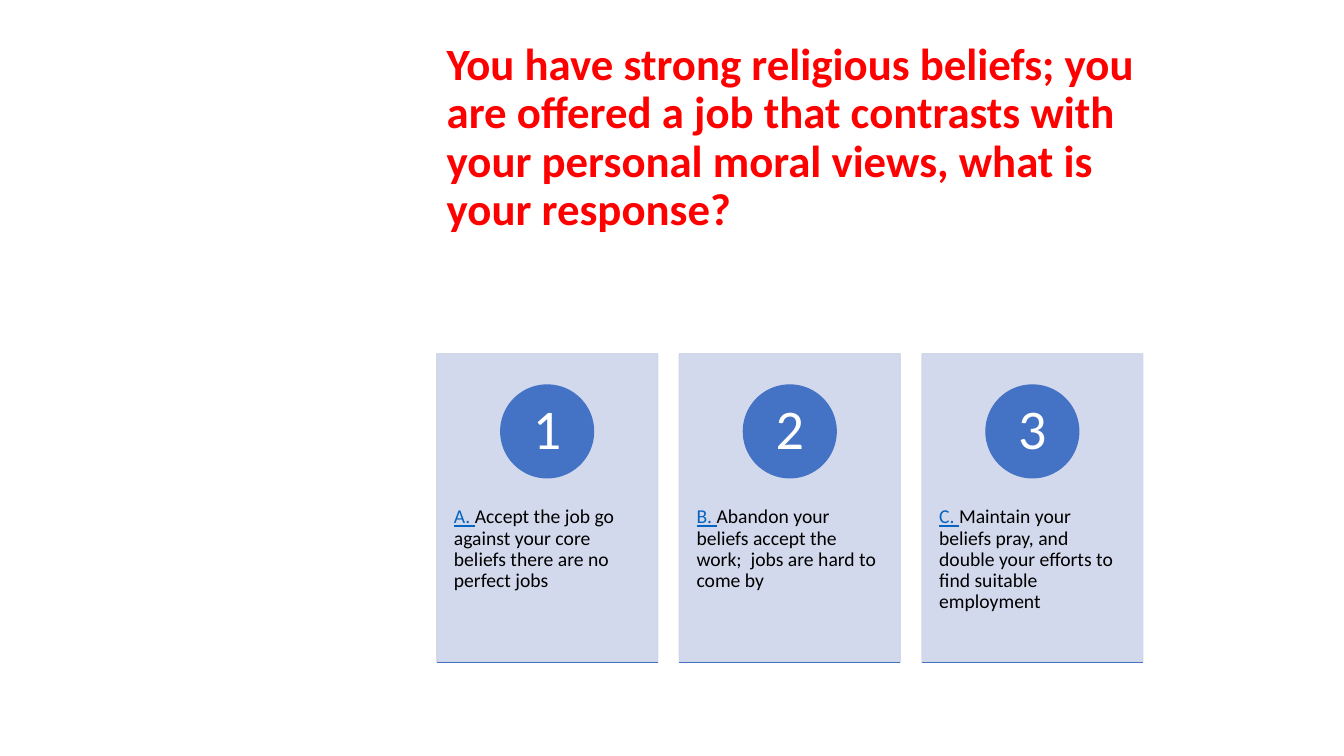
from dataclasses import dataclass

from lxml import etree
from pptx import Presentation
from pptx import util as u
from pptx.dml.color import RGBColor
from pptx.enum import shapes, text
from pptx.oxml.ns import qn


@dataclass(frozen=True)
class Theme:
    font: str = "Calibri"
    question: str = "FF0000"
    panel: str = "CFD5EA"
    accent: str = "4472C4"
    letter: str = "0563C1"
    body: str = "000000"
    badge: str = "FFFFFF"
    question_size: int = 32
    body_size: int = 14
    badge_size: int = 40
    panel_opacity: int = 90


THEME = Theme()
WIDTH, HEIGHT = u.Inches(13.33), u.Inches(7.5)

LEFT = 32.5
CARD_WIDTH, CARD_PITCH = 16.43, 18.05
CARD_TOP, CARD_HEIGHT = 46.8, 40.8
BADGE_TOP, BADGE_WIDTH, BADGE_HEIGHT = 50.93, 6.9, 12.27
ANSWER_TOP, ANSWER_HEIGHT = 62.27, 24.53

QUESTION = (
    "You have strong religious beliefs; you are offered a job that "
    "contrasts with your personal moral views, what is your response?"
)
ANSWERS = [
    ("A. ", "Accept the job go against your core beliefs there are no perfect jobs"),
    ("B. ", "Abandon your beliefs accept the work;  jobs are hard to come by"),
    ("C. ", "Maintain your beliefs pray, and double your efforts to find suitable employment"),
]


def x(percent):
    return round(WIDTH * percent / 100)


def y(percent):
    return round(HEIGHT * percent / 100)


def box(left, top, width, height):
    return x(left), y(top), x(width), y(height)


def set_opacity(fill, percent):
    for color in fill.iter(qn("a:srgbClr")):
        etree.SubElement(color, qn("a:alpha"), val=str(percent * 1000))


def add_run(p, words, size, color, bold=False, underline=False):
    r = p.add_run()
    r.text = words
    r.font.name = THEME.font
    r.font.size = u.Pt(size)
    r.font.bold = bold
    r.font.underline = underline
    r.font.color.rgb = RGBColor.from_string(color)


def set_frame(sp, anchor, align, inset_x, inset_y):
    tf = sp.text_frame
    tf.word_wrap = True
    tf.vertical_anchor = anchor
    tf.margin_left = tf.margin_right = u.Inches(inset_x)
    tf.margin_top = tf.margin_bottom = u.Inches(inset_y)
    p = tf.paragraphs[0]
    p.alignment = align
    p.line_spacing = 0.9
    return p


def add_solid(s, preset, place, color):
    sp = s.shapes.add_shape(preset, *place)
    sp.shadow.inherit = False
    sp.fill.solid()
    sp.fill.fore_color.rgb = RGBColor.from_string(color)
    sp.line.color.rgb = RGBColor.from_string(color)
    sp.line.width = u.Pt(1)
    return sp


def add_question(s):
    sp = s.shapes.add_textbox(*box(LEFT, 3.33, 55, 30))
    p = set_frame(sp, text.MSO_ANCHOR.MIDDLE, text.PP_ALIGN.LEFT, 0.1, 0.05)
    add_run(p, QUESTION, THEME.question_size, THEME.question, bold=True)


def add_panel(s, left):
    place = box(left, CARD_TOP, CARD_WIDTH, CARD_HEIGHT)
    sp = add_solid(s, shapes.MSO_SHAPE.RECTANGLE, place, THEME.panel)
    set_opacity(sp.element.spPr, THEME.panel_opacity)


def add_answer(s, left, letter, answer):
    sp = s.shapes.add_textbox(*box(left, ANSWER_TOP, CARD_WIDTH, ANSWER_HEIGHT))
    p = set_frame(sp, text.MSO_ANCHOR.TOP, text.PP_ALIGN.LEFT, 0.17, 0.36)
    add_run(p, letter, THEME.body_size, THEME.letter, underline=True)
    add_run(p, answer, THEME.body_size, THEME.body)


def add_badge(s, left, number):
    badge_left = left + (CARD_WIDTH - BADGE_WIDTH) / 2
    place = box(badge_left, BADGE_TOP, BADGE_WIDTH, BADGE_HEIGHT)
    sp = add_solid(s, shapes.MSO_SHAPE.OVAL, place, THEME.accent)
    p = set_frame(sp, text.MSO_ANCHOR.MIDDLE, text.PP_ALIGN.CENTER, 0.07, 0.01)
    add_run(p, str(number), THEME.badge_size, THEME.badge)


def add_base_line(s, left):
    base = y(CARD_TOP + CARD_HEIGHT)
    line = s.shapes.add_connector(
        shapes.MSO_CONNECTOR.STRAIGHT, x(left), base, x(left + CARD_WIDTH), base
    )
    line.line.color.rgb = RGBColor.from_string(THEME.accent)
    line.line.width = u.Pt(1)
    etree.SubElement(line.element.spPr, qn("a:effectLst"))


def add_card(s, index, letter, answer):
    left = LEFT + index * CARD_PITCH
    add_panel(s, left)
    add_answer(s, left, letter, answer)
    add_badge(s, left, index + 1)
    add_base_line(s, left)


def main():
    prs = Presentation()
    prs.slide_width, prs.slide_height = WIDTH, HEIGHT
    s = prs.slides.add_slide(prs.slide_layouts[6])
    add_question(s)
    for index, (letter, answer) in enumerate(ANSWERS):
        add_card(s, index, letter, answer)
    prs.save("out.pptx")


if __name__ == "__main__":
    main()
